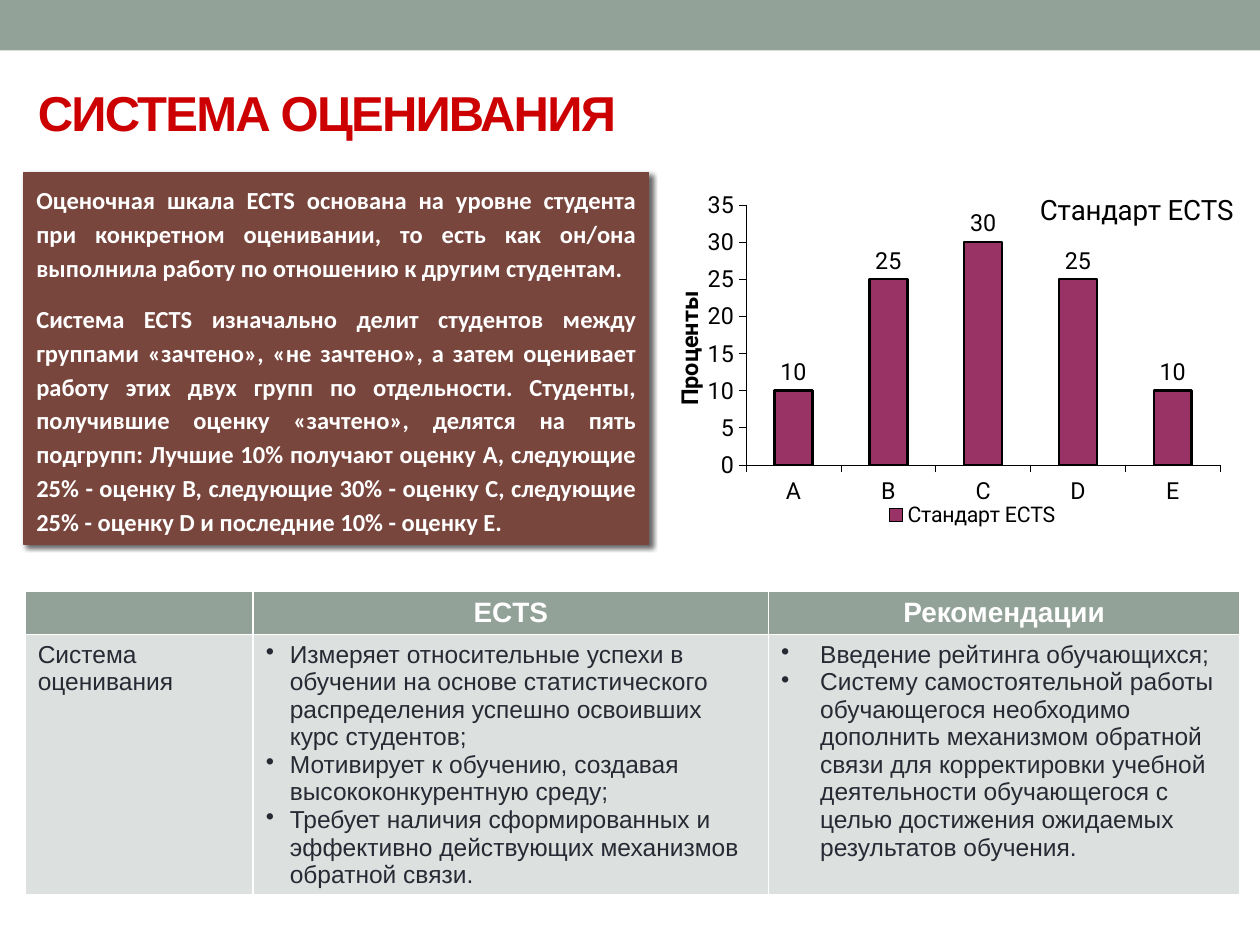
from lxml import etree
from pptx import Presentation
from pptx.chart.data import CategoryChartData
from pptx.dml.color import RGBColor
from pptx.enum.chart import XL_CHART_TYPE, XL_LABEL_POSITION, XL_LEGEND_POSITION, XL_TICK_MARK
from pptx.enum.shapes import MSO_SHAPE
from pptx.enum.text import MSO_ANCHOR, MSO_AUTO_SIZE, PP_ALIGN
from pptx.oxml.ns import qn
from pptx.util import Inches, Pt

COLUMNS = XL_CHART_TYPE.COLUMN_CLUSTERED
OUTSIDE_END = XL_LABEL_POSITION.OUTSIDE_END
BOTTOM = XL_LEGEND_POSITION.BOTTOM
TICK_OUT = XL_TICK_MARK.OUTSIDE
RECTANGLE = MSO_SHAPE.RECTANGLE
MIDDLE = MSO_ANCHOR.MIDDLE
GROW = MSO_AUTO_SIZE.SHAPE_TO_FIT_TEXT
LEFT, CENTER, JUSTIFY = PP_ALIGN.LEFT, PP_ALIGN.CENTER, PP_ALIGN.JUSTIFY

SAGE = RGBColor(0x93, 0xA2, 0x99)
PALE = RGBColor(0xDC, 0xE0, 0xDE)
RED = RGBColor(0xCC, 0x00, 0x00)
BROWN = RGBColor(0x79, 0x46, 0x3D)
PLUM = RGBColor(0x99, 0x33, 0x66)
INK = RGBColor(0x29, 0x29, 0x34)
WHITE = RGBColor(0xFF, 0xFF, 0xFF)
BLACK = RGBColor(0x00, 0x00, 0x00)


def style(font, name, size, color, bold=False):
    font.name, font.size, font.bold = name, Pt(size), bold
    font.color.rgb = color


def place(element, **values):
    """Give a chart part a manual layout, in fractions of the chart."""
    layout = element.find(qn("c:layout"))
    if layout is None:
        layout = etree.Element(qn("c:layout"))
        element.insert(0, layout)
    manual = etree.SubElement(layout, qn("c:manualLayout"))
    for tag, value in values.items():
        etree.SubElement(manual, qn("c:" + tag)).set("val", str(value))


prs = Presentation()
prs.slide_width, prs.slide_height = Inches(10), Inches(7.5)
slide = prs.slides.add_slide(prs.slide_layouts[5])
shapes = slide.shapes

# Top band
band = shapes.add_shape(RECTANGLE, 0, 0, Inches(10), Inches(0.4))
band.shadow.inherit = False
band.fill.solid()
band.fill.fore_color.rgb = SAGE
band.line.fill.background()

# Title
title = shapes.title
title.left, title.top, title.width, title.height = (
    Inches(0.2), Inches(0.6), Inches(6.22), Inches(0.57))
title.text_frame.text = "СИСТЕМА ОЦЕНИВАНИЯ"
title.text_frame.vertical_anchor = MIDDLE
title.text_frame.auto_size = MSO_AUTO_SIZE.NONE
heading = title.text_frame.paragraphs[0]
heading.alignment = LEFT
style(heading.font, "Arial", 28, RED, True)
heading.runs[0].font._element.set("spc", "-100")

# Grading chart
grades = CategoryChartData()
grades.categories = ["A", "B", "C", "D", "E"]
grades.add_series("Стандарт ECTS", (10, 25, 30, 25, 10))
chart = shapes.add_chart(COLUMNS, Inches(5.31), Inches(1.43),
                         Inches(4.52), Inches(2.83), grades).chart
style(chart.font, "Roboto", 13.4, BLACK)
chart.has_title = True
chart.chart_title.text_frame.text = "Стандарт ECTS"
style(chart.chart_title.text_frame.paragraphs[0].font, "Roboto", 16, BLACK)
chart.has_legend = True
chart.legend.position = BOTTOM
chart.legend.include_in_layout = False
style(chart.legend.font, "Roboto", 12.3, BLACK)

for axis in (chart.category_axis, chart.value_axis):
    axis.has_major_gridlines = False
    axis.major_tick_mark = TICK_OUT
    axis.format.line.color.rgb = BLACK
    axis.format.line.width = Pt(0.36)
    style(axis.tick_labels.font, "Roboto", 13.4, BLACK)
percent_axis = chart.value_axis
percent_axis.minimum_scale, percent_axis.maximum_scale = 0, 35
percent_axis.major_unit = 5
percent_axis.axis_title.text_frame.text = "Проценты"
style(percent_axis.axis_title.text_frame.paragraphs[0].font, "Roboto", 13.4, BLACK, True)

plot = chart.plots[0]
plot.gap_width = 150
plot.vary_by_categories = False
plot.has_data_labels = True
plot.data_labels.show_value = True
plot.data_labels.position = OUTSIDE_END
style(plot.data_labels.font, "Roboto", 13.4, BLACK)
bars = plot.series[0].format
bars.fill.solid()
bars.fill.fore_color.rgb = PLUM
bars.line.color.rgb = BLACK
bars.line.width = Pt(1.45)

chart_root = chart._chartSpace.chart
place(chart_root.find(qn("c:title")), xMode="edge", yMode="edge", x=0.65, y=0.02)
place(chart_root.find(qn("c:legend")), xMode="edge", yMode="edge", x=0.38, y=0.89)
place(chart_root.plotArea, layoutTarget="inner", xMode="edge", yMode="edge",
      x=0.137, y=0.07, w=0.842, h=0.729)

# Comparison table: each cell holds its paragraphs
ROWS = [
    [[], ["ECTS"], ["Рекомендации"]],
    [["Система оценивания"],
     ["Измеряет относительные успехи в обучении на основе статистического "
      "распределения успешно освоивших курс студентов;",
      "Мотивирует к обучению, создавая высококонкурентную среду;",
      "Требует наличия сформированных и эффективно действующих механизмов обратной связи."],
     ["Введение рейтинга обучающихся;",
      "Систему самостоятельной работы обучающегося необходимо дополнить механизмом "
      "обратной связи для корректировки учебной деятельности обучающегося с целью "
      "достижения ожидаемых результатов обучения."]],
]
BULLET_INDENTS = [None, Inches(0.19), Inches(0.31)]
table = shapes.add_table(2, 3, Inches(0.2), Inches(4.69), Inches(9.64), Inches(2.31)).table
for column, width in zip(table.columns, (1.81, 4.09, 3.74)):
    column.width = Inches(width)
for row, height in zip(table.rows, (0.33, 1.98)):
    row.height = Inches(height)
for r, row in enumerate(ROWS):
    for c, texts in enumerate(row):
        cell = table.cell(r, c)
        cell.fill.solid()
        cell.fill.fore_color.rgb = PALE if r else SAGE
        cell.text_frame.text = "\n".join(texts)
        for paragraph in cell.text_frame.paragraphs:
            if r == 0:
                paragraph.alignment = CENTER
                style(paragraph.font, "Arial", 16, WHITE, True)
                continue
            style(paragraph.font, "Arial", 14, INK)
            indent = BULLET_INDENTS[c]
            if indent:
                properties = paragraph._p.get_or_add_pPr()
                properties.set("marL", str(indent))
                properties.set("indent", str(-indent))
                bullet = etree.Element(qn("a:buChar"), char="•")
                properties.insert(0, bullet)

# Explanation panel
panel = shapes.add_shape(RECTANGLE, Inches(0.19), Inches(1.37), Inches(4.96), Inches(2.95))
panel.fill.solid()
panel.fill.fore_color.rgb = BROWN
panel.line.color.rgb = BROWN
panel.line.width = Pt(0.75)
panel.shadow.inherit = False
effects = panel._element.spPr.find(qn("a:effectLst"))
shadow = etree.SubElement(effects, qn("a:outerShdw"), blurRad=str(Pt(3)), dist=str(Pt(2)),
                          dir=str(45 * 60000), rotWithShape="0")
shadow_color = etree.SubElement(shadow, qn("a:srgbClr"), val=str(BLACK))
etree.SubElement(shadow_color, qn("a:alpha"), val="60000")
explanation = panel.text_frame
explanation.word_wrap = True
explanation.auto_size = GROW
explanation.text = (
    "Оценочная шкала ECTS основана на уровне студента при конкретном оценивании, то есть "
    "как он/она выполнила работу по отношению к другим студентам.\n"
    "Система ECTS изначально делит студентов между группами «зачтено», «не зачтено», а "
    "затем оценивает работу этих двух групп по отдельности. Студенты, получившие оценку "
    "«зачтено», делятся на пять подгрупп: Лучшие 10% получают оценку A, следующие 25% - "
    "оценку B, следующие 30% - оценку C, следующие 25% - оценку D и последние 10% - оценку E.")
for paragraph in explanation.paragraphs:
    paragraph.alignment = JUSTIFY
    paragraph.line_spacing = 1.15
    paragraph.space_after = Pt(10)
    style(paragraph.font, "Calibri", 14, WHITE, True)

prs.save("out.pptx")
